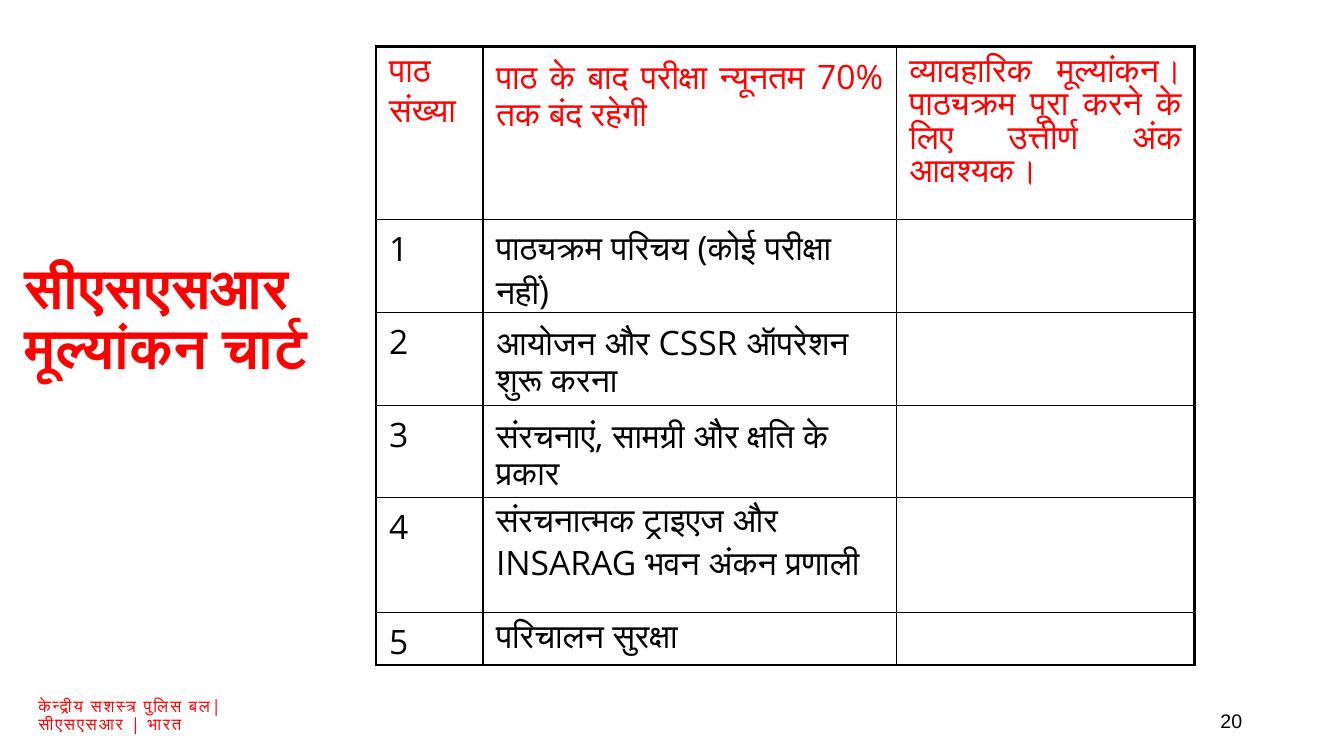
from lxml import etree
from pptx import Presentation
from pptx.dml.color import RGBColor
from pptx.enum.shapes import MSO_SHAPE
from pptx.enum.text import MSO_ANCHOR, PP_ALIGN
from pptx.oxml.ns import qn
from pptx.util import Inches, Pt

RED, BLACK, WHITE = "FF0000", "000000", "FFFFFF"
TITLE = "सीएसएसआर मूल्यांकन चार्ट"
FOOTER = "केन्द्रीय सशस्त्र पुलिस बल|सीएसएसआर | भारत"
PAGE_NUMBER = "20"
HEADERS = [
    (["पाठ", "संख्या"], PP_ALIGN.LEFT, 0.73, 0.09),
    (["पाठ के बाद परीक्षा न्यूनतम 70% तक बंद रहेगी"], PP_ALIGN.JUSTIFY, 0.8, 0.14),
    (["व्यावहारिक मूल्यांकन। पाठ्यक्रम पूरा करने के लिए उत्तीर्ण अंक आवश्यक।"],
     PP_ALIGN.JUSTIFY, 0.73, 0.09),
]
LESSONS = [
    ("पाठ्यक्रम परिचय (कोई परीक्षा नहीं)", 0.95, 0.06),
    ("आयोजन और CSSR ऑपरेशन शुरू करना", 0.8, 0.14),
    ("संरचनाएं, सामग्री और क्षति के प्रकार", 0.8, 0.14),
    ("संरचनात्मक ट्राइएज और INSARAG भवन अंकन प्रणाली", 0.93, 0.01),
    ("परिचालन सुरक्षा", 0.8, 0.06),
]
COLUMN_WIDTHS = [1.06, 4.1, 2.96]
ROW_HEIGHTS = [1.72, 0.92, 0.92, 0.92, 1.14, 0.52]
THICK, THIN = 2.25, 1


def color(value):
    return RGBColor.from_string(value)


def set_values(target, values):
    for name, value in values.items():
        setattr(target, name, value)


def write(frame, lines, size, ink, font="Open Sans", bold=False, align=PP_ALIGN.LEFT,
          spacing=1.0, gap=0, tracking=0):
    for index, line in enumerate(lines):
        paragraph = frame.paragraphs[0] if index == 0 else frame.add_paragraph()
        set_values(paragraph, {"alignment": align, "line_spacing": spacing})
        if index:
            paragraph.space_before = Pt(gap)
        run = paragraph.add_run()
        run.text = line
        set_values(run.font, {"size": Pt(size), "name": font, "bold": bold})
        run.font.color.rgb = color(ink)
        properties = run.font._element
        etree.SubElement(properties, qn("a:cs"), typeface=font)
        if tracking:
            properties.set("spc", str(round(tracking * 100)))


def set_frame(frame, horizontal, vertical, anchor):
    set_values(frame, {
        "word_wrap": True, "vertical_anchor": anchor,
        "margin_left": Inches(horizontal), "margin_right": Inches(horizontal),
        "margin_top": Inches(vertical), "margin_bottom": Inches(vertical),
    })


def add_borders(cell, widths):
    properties = cell._tc.get_or_add_tcPr()
    for side, width in widths.items():
        line = etree.SubElement(properties, qn(f"a:ln{side}"), w=str(Pt(width)))
        fill = etree.SubElement(line, qn("a:solidFill"))
        etree.SubElement(fill, qn("a:srgbClr"), val=BLACK)


def add_evaluation_table(slide):
    rows, columns = len(ROW_HEIGHTS), len(COLUMN_WIDTHS)
    table = slide.shapes.add_table(
        rows, columns, Inches(3.73), Inches(0.46),
        Inches(sum(COLUMN_WIDTHS)), Inches(sum(ROW_HEIGHTS))).table
    set_values(table, {"first_row": False, "horz_banding": False})
    for column, width in zip(table.columns, COLUMN_WIDTHS):
        column.width = Inches(width)
    for row, height in zip(table.rows, ROW_HEIGHTS):
        row.height = Inches(height)

    left = PP_ALIGN.LEFT
    content = [HEADERS]
    for number, (lesson, spacing, top) in enumerate(LESSONS, 1):
        content.append([([str(number)], left, 1.0, 0.06),
                        ([lesson], left, spacing, top), ([], left, 1.0, 0.06)])

    for row, entries in enumerate(content):
        for column, (lines, align, spacing, top) in enumerate(entries):
            cell = table.cell(row, column)
            set_values(cell, {
                "margin_left": Inches(0.13), "margin_right": Inches(0.13),
                "margin_top": Inches(top), "margin_bottom": Inches(0),
            })
            write(cell.text_frame, lines, 24, BLACK if row else RED,
                  align=align, spacing=spacing, gap=5.2)
            add_borders(cell, {
                "L": THICK if column == 0 else THIN,
                "R": THICK if column == columns - 1 else THIN,
                "T": THICK if row == 0 else THIN,
                "B": THICK if row == rows - 1 else THIN,
            })
            cell.fill.background()


def main():
    presentation = Presentation()
    set_values(presentation, {"slide_width": Inches(13.33), "slide_height": Inches(7.5)})
    slide = presentation.slides.add_slide(presentation.slide_layouts[6])

    footer = slide.shapes.add_textbox(Inches(0.34), Inches(6.88), Inches(2.56), Inches(0.49))
    set_frame(footer.text_frame, 0.04, 0.04, MSO_ANCHOR.TOP)
    write(footer.text_frame, [FOOTER], 12, RED, spacing=0.9, tracking=1.2)

    title = slide.shapes.add_shape(
        MSO_SHAPE.RECTANGLE, Inches(0.14), Inches(2.53), Inches(4.46), Inches(2.12))
    title.shadow.inherit = False
    title.fill.solid()
    title.fill.fore_color.rgb = color(WHITE)
    title.line.fill.background()
    set_frame(title.text_frame, 0.1, 0.05, MSO_ANCHOR.TOP)
    write(title.text_frame, [TITLE], 40, RED, bold=True, spacing=0.9)

    add_evaluation_table(slide)

    number = slide.shapes.add_textbox(Inches(9.42), Inches(6.95), Inches(3), Inches(0.4))
    set_frame(number.text_frame, 0.1, 0.05, MSO_ANCHOR.MIDDLE)
    write(number.text_frame, [PAGE_NUMBER], 14, BLACK, font="Arial", align=PP_ALIGN.RIGHT)

    presentation.save("out.pptx")


if __name__ == "__main__":
    main()
